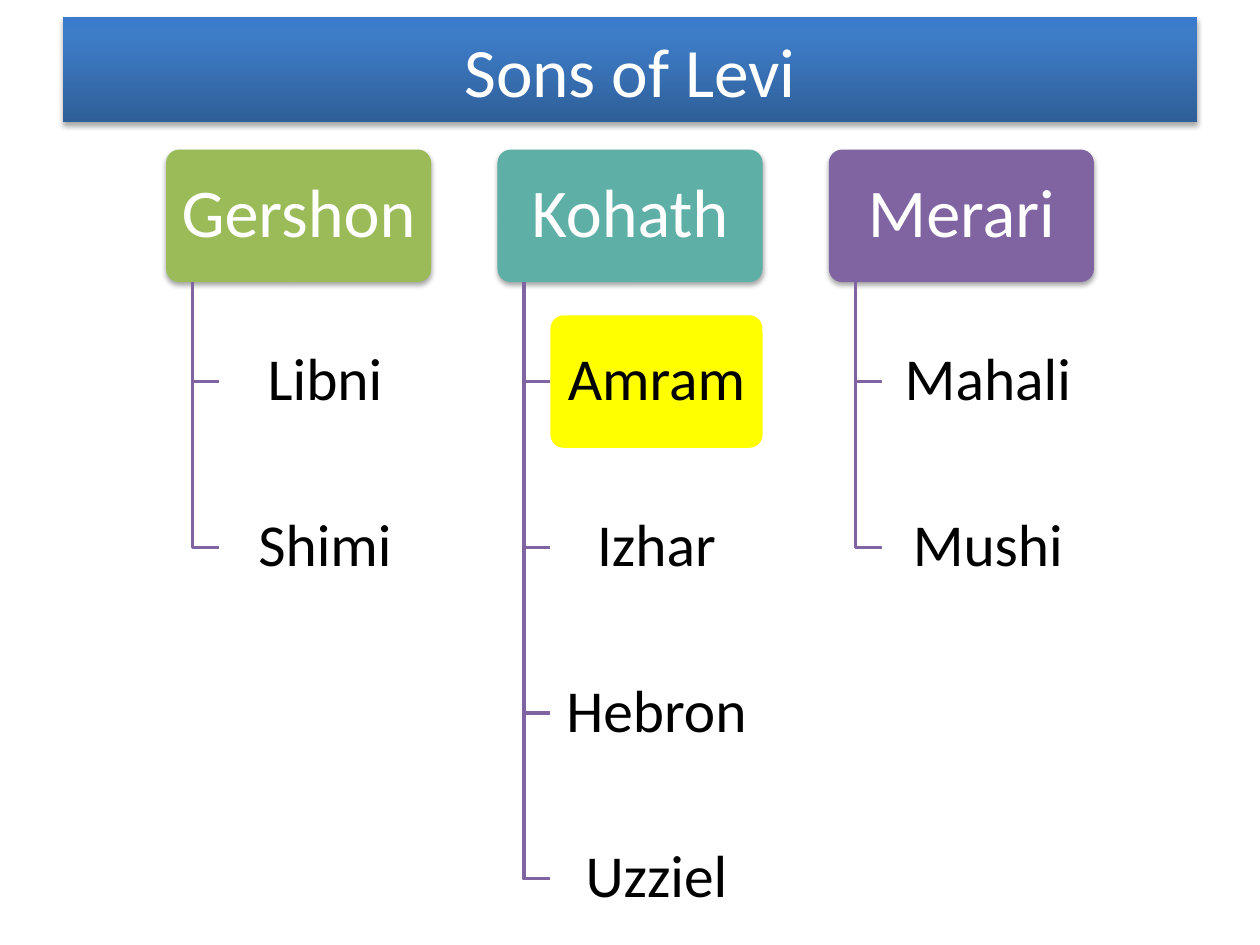
from dataclasses import dataclass
from typing import Any

from pptx import Presentation
from pptx import util as u
from pptx.dml.color import RGBColor
from pptx.enum import shapes, text
from pptx.oxml import ns, parse_xml


@dataclass(frozen=True)
class Theme:
    font: str = "Calibri"
    title: float = 39.6
    head: float = 39
    item: float = 34
    line: float = 2
    white: str = "FFFFFF"
    black: str = "000000"
    green: str = "9BBB59"
    teal: str = "5EAFA6"
    purple: str = "8064A2"
    yellow: str = "FFFF00"
    banner: tuple = ((0, "2F5F99"), (80, "3D7CC7"), (100, "3A7CCB"))


@dataclass
class Chart:
    theme: Theme
    slide: Any

    def shape(self, kind, left, top, wide, high):
        box = self.slide.shapes.add_shape(
            kind, u.Pt(left), u.Pt(top), u.Pt(wide), u.Pt(high))
        box.shadow.inherit = False
        box.line.fill.background()
        return box

    def paint(self, box, color, alpha=None):
        box.fill.solid()
        box.fill.fore_color.rgb = RGBColor.from_string(color)
        if alpha:
            tint = box._element.spPr.find(".//" + ns.qn("a:srgbClr"))
            tint.append(parse_xml(
                f'<a:alpha {ns.nsdecls("a")} val="{alpha * 1000}"/>'))

    def shade(self, box):
        box._element.spPr.find(ns.qn("a:effectLst")).append(parse_xml(
            f'<a:outerShdw {ns.nsdecls("a")} blurRad="{u.Pt(3.1)}" '
            f'dist="{u.Pt(1.8)}" dir="5400000" rotWithShape="0">'
            f'<a:srgbClr val="{self.theme.black}"><a:alpha val="35000"/>'
            '</a:srgbClr></a:outerShdw>'))

    def label(self, box, words, size, color):
        frame = box.text_frame
        frame.text = words
        frame.word_wrap = True
        frame.vertical_anchor = text.MSO_ANCHOR.MIDDLE
        par = frame.paragraphs[0]
        par.alignment = text.PP_ALIGN.CENTER
        font = par.runs[0].font
        font.name = self.theme.font
        font.size = u.Pt(size)
        font.color.rgb = RGBColor.from_string(color)
        return frame

    def banner(self, words, left, top, wide, high):
        box = self.shape(shapes.MSO_SHAPE.RECTANGLE, left, top, wide, high)
        box.fill.gradient()
        box.fill.gradient_angle = 90
        stops = box._element.spPr.find(".//" + ns.qn("a:gsLst"))
        for stop in list(stops):
            stops.remove(stop)
        for place, color in self.theme.banner:
            stops.append(parse_xml(
                f'<a:gs {ns.nsdecls("a")} pos="{place * 1000}">'
                f'<a:srgbClr val="{color}"/></a:gs>'))
        self.shade(box)
        self.label(box, words, self.theme.title, self.theme.white)

    def card(self, words, left, top, wide, high, size, ink, inset):
        box = self.shape(
            shapes.MSO_SHAPE.ROUNDED_RECTANGLE, left, top, wide, high)
        box.adjustments[0] = 0.1
        frame = self.label(box, words, size, ink)
        frame.margin_left = frame.margin_right = u.Pt(inset)
        frame.margin_top = frame.margin_bottom = u.Pt(3.6)
        frame.paragraphs[0].line_spacing = 0.9
        return box

    def head(self, words, color, *area):
        box = self.card(words, *area, self.theme.head, self.theme.white, 5.8)
        self.paint(box, color)
        self.shade(box)

    def item(self, words, marked, *area):
        box = self.card(words, *area, self.theme.item, self.theme.black, 5)
        if marked:
            self.paint(box, self.theme.yellow)
        else:
            self.paint(box, self.theme.white, 90)

    def elbow(self, left, top, right, low):
        pen = self.slide.shapes.build_freeform(u.Pt(left), u.Pt(top))
        pen.add_line_segments(
            [(u.Pt(left), u.Pt(low)), (u.Pt(right), u.Pt(low))], close=False)
        bend = pen.convert_to_shape()
        bend.shadow.inherit = False
        bend.fill.background()
        bend.line.color.rgb = RGBColor.from_string(self.theme.purple)
        bend.line.width = u.Pt(self.theme.line)


def main():
    deck = Presentation()
    deck.slide_width, deck.slide_height = u.Pt(720), u.Pt(540)
    theme = Theme()
    chart = Chart(theme, deck.slides.add_slide(deck.slide_layouts[6]))

    clans = (
        ("Gershon", theme.green, ("Libni", "Shimi")),
        ("Kohath", theme.teal, ("Amram", "Izhar", "Hebron", "Uzziel")),
        ("Merari", theme.purple, ("Mahali", "Mushi")),
    )
    wide, high = 151.5, 75.75
    step, drop = wide * 1.25, high * 1.25
    start = (720 - step * 2 - wide) / 2
    top = 540 - drop * 4 - high

    for col, (name, color, sons) in enumerate(clans):
        left = start + col * step
        chart.head(name, color, left, top, wide, high)
        edge = left + wide * 0.2
        for row, son in enumerate(sons, 1):
            y = top + row * drop
            chart.elbow(left + wide * 0.1, top + high, edge, y + high / 2)
            chart.item(son, son == "Amram", edge, y, wide * 0.8, high)

    chart.banner("Sons of Levi", 36, 9.6, 648, 60)
    deck.save("out.pptx")


if __name__ == "__main__":
    main()
